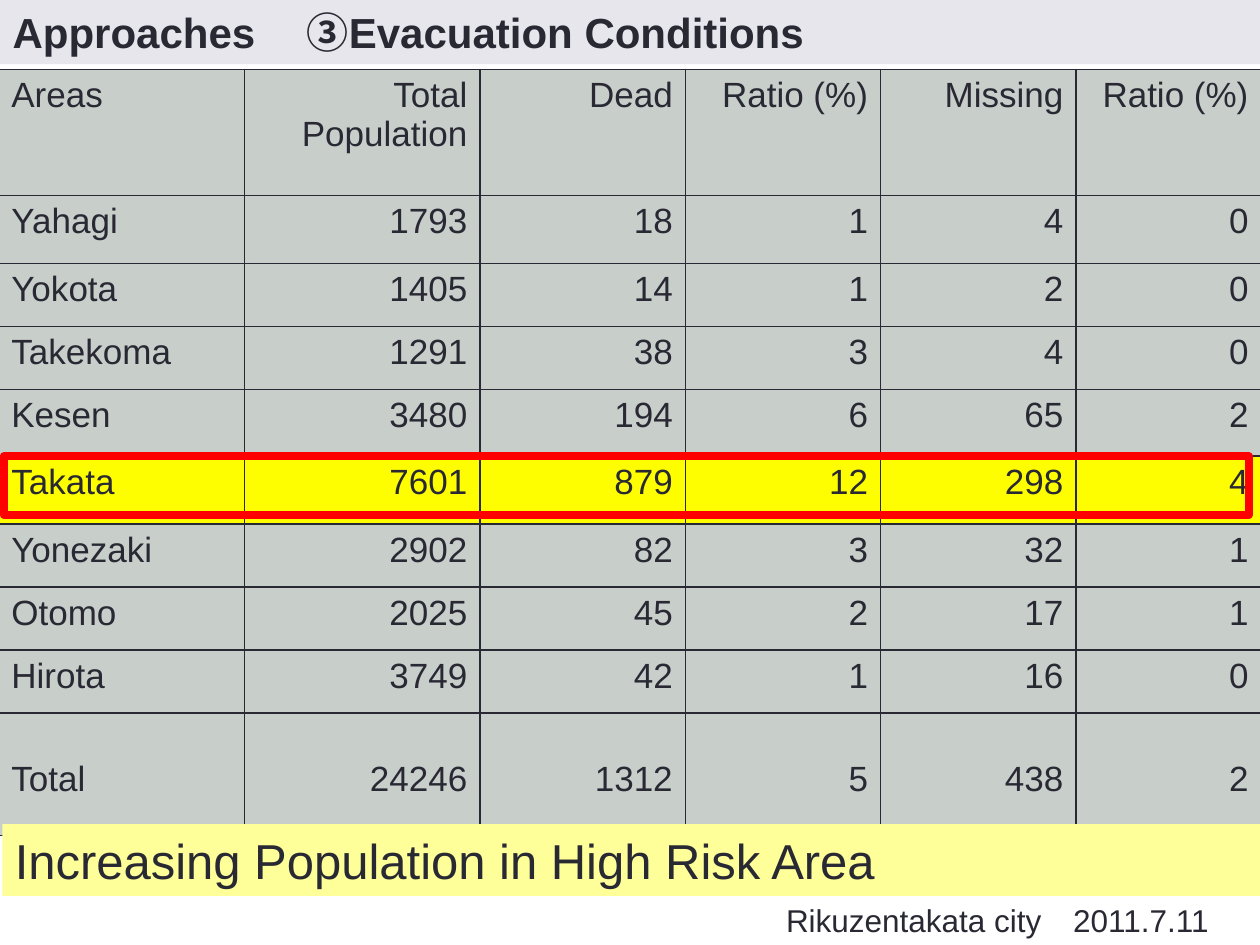
from lxml.etree import SubElement
from pptx import Presentation
from pptx.dml.color import RGBColor
from pptx.enum.shapes import MSO_SHAPE
from pptx.enum.text import MSO_ANCHOR, MSO_AUTO_SIZE, PP_ALIGN
from pptx.oxml.ns import qn
from pptx.util import Emu, Pt

FONT = "Arial"
INK, SAGE, YELLOW = "292934", "C8CECA", "FFFE00"
COLUMN_WIDTHS = [195, 187, 163, 155, 155, 147]
ROW_HEIGHTS = [100, 54, 50, 50, 53, 54, 50, 50, 50, 97]
ROWS = [
    ["Areas", "Total Population", "Dead", "Ratio (%)", "Missing", "Ratio (%)"],
    ["Yahagi", 1793, 18, 1, 4, 0],
    ["Yokota", 1405, 14, 1, 2, 0],
    ["Takekoma", 1291, 38, 3, 4, 0],
    ["Kesen", 3480, 194, 6, 65, 2],
    ["Takata", 7601, 879, 12, 298, 4],
    ["Yonezaki", 2902, 82, 3, 32, 1],
    ["Otomo", 2025, 45, 2, 17, 1],
    ["Hirota", 3749, 42, 1, 16, 0],
    ["Total", 24246, 1312, 5, 438, 2],
]


def px(n):
    """100 px to the inch."""
    return Emu(n * 9144)


def rgb(value):
    return RGBColor.from_string(value)


def set_fill(obj, color):
    obj.fill.solid()
    obj.fill.fore_color.rgb = rgb(color)


def set_text(tf, text, size, bold=False, align=PP_ALIGN.LEFT):
    tf.text = text
    p = tf.paragraphs[0]
    p.alignment = align
    font = p.runs[0].font
    font.name, font.size, font.bold = FONT, Pt(size), bold
    font.color.rgb = rgb(INK)


def add_title(s, box, text):
    title = s.shapes.title
    title.left, title.top, title.width, title.height = map(px, box)
    set_fill(title, "E6E6EC")
    tf = title.text_frame
    set_text(tf, text, 24, bold=True)
    tf.vertical_anchor = MSO_ANCHOR.TOP
    tf.auto_size = MSO_AUTO_SIZE.NONE


def add_text(s, box, text, size, fill=None):
    sp = s.shapes.add_textbox(*map(px, box))
    if fill:
        set_fill(sp, fill)
    sp.text_frame.word_wrap = True
    set_text(sp.text_frame, text, size)


def set_borders(cell, color, width):
    tc_pr = cell._tc.get_or_add_tcPr()
    for side in ("L", "R", "T", "B"):
        ln = SubElement(tc_pr, qn(f"a:ln{side}"), w=str(Pt(width)))
        solid = SubElement(ln, qn("a:solidFill"))
        SubElement(solid, qn("a:srgbClr"), val=color)


def add_evacuation_table(s, left, top):
    frame = s.shapes.add_table(len(ROWS), len(COLUMN_WIDTHS), px(left), px(top),
                               px(sum(COLUMN_WIDTHS)), px(sum(ROW_HEIGHTS)))
    table = frame.table
    for column, width in zip(table.columns, COLUMN_WIDTHS):
        column.width = px(width)
    for row, height, values in zip(table.rows, ROW_HEIGHTS, ROWS):
        row.height = px(height)
        for i, (cell, value) in enumerate(zip(row.cells, values)):
            set_borders(cell, INK, 1)
            set_fill(cell, YELLOW if values[0] == "Takata" else SAGE)
            set_text(cell.text_frame, str(value), 20,
                     align=PP_ALIGN.RIGHT if i else PP_ALIGN.LEFT)
            # The total sits one line lower than the other rows
            cell.margin_top = px(37 if values[0] == "Total" else 5)


def add_highlight(s, box):
    sp = s.shapes.add_shape(MSO_SHAPE.RECTANGLE, *map(px, box))
    sp.shadow.inherit = False
    sp.fill.background()
    sp.line.color.rgb = rgb("FF0000")
    sp.line.width = Pt(4.5)


def main():
    prs = Presentation()
    prs.slide_width, prs.slide_height = px(1000), px(750)
    s = prs.slides.add_slide(prs.slide_layouts[5])

    add_title(s, (0, 0, 1000, 51), "Approaches　 ③Evacuation Conditions")
    add_evacuation_table(s, -1, 55)
    add_highlight(s, (3, 362, 988, 47))

    # Source and conclusion
    add_text(s, (614, 710, 386, 40), "Rikuzentakata city　2011.7.11", 18)
    add_text(s, (2, 654, 1000, 57), "Increasing Population in High Risk Area",
             28, fill="FFFF99")
    prs.save("out.pptx")


if __name__ == "__main__":
    main()
